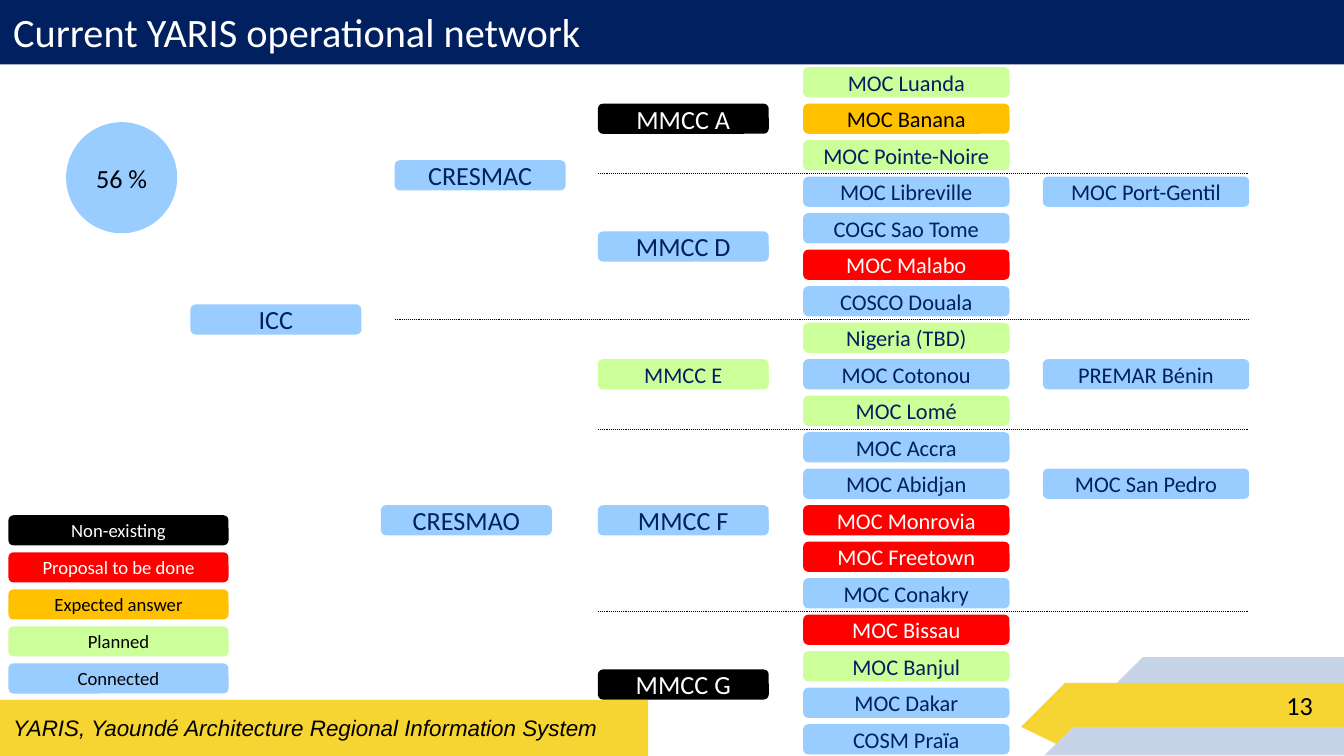
from lxml.etree import SubElement
from pptx import Presentation
from pptx.dml.color import RGBColor
from pptx.enum.dml import MSO_LINE
from pptx.enum.shapes import MSO_CONNECTOR, MSO_SHAPE
from pptx.enum.text import MSO_ANCHOR, MSO_AUTO_SIZE, PP_ALIGN
from pptx.oxml.ns import qn
from pptx.util import Cm, Pt

COLOURS = {
    "navy": "002060", "white": "FFFFFF", "black": "000000", "yellow": "F6D431",
    "mist": "C7D3E6", "missing": "000000", "proposal": "FF0000",
    "expected": "FFC000", "planned": "CCFF99", "connected": "99CCFF",
}
INK = {"missing": "white", "proposal": "white", "expected": "black",
       "planned": "navy", "connected": "navy"}

PILL_HEIGHT = 0.57
FIRST_ROW, ROW_STEP = 1.27, 0.69
FIRST_KEY, KEY_STEP = 9.74, 0.7
CENTRE_LEFT, CENTRE_WIDTH = 15.18, 3.9
PEER_LEFT = 19.71
ZONE_LEFT, HUB_WIDTH = 11.3, 3.23
LINE_END = 23.6

CENTRES = [
    ("MOC Luanda", "planned"), ("MOC Banana", "expected"),
    ("MOC Pointe-Noire", "planned"), ("MOC Libreville", "connected"),
    ("COGC Sao Tome", "connected"), ("MOC Malabo", "proposal"),
    ("COSCO Douala", "connected"), ("Nigeria (TBD)", "planned"),
    ("MOC Cotonou", "connected"), ("MOC Lomé", "planned"),
    ("MOC Accra", "connected"), ("MOC Abidjan", "connected"),
    ("MOC Monrovia", "proposal"), ("MOC Freetown", "proposal"),
    ("MOC Conakry", "connected"), ("MOC Bissau", "proposal"),
    ("MOC Banjul", "planned"), ("MOC Dakar", "connected"),
    ("COSM Praïa", "connected"),
]
PEERS = [("MOC Port-Gentil", 3), ("PREMAR Bénin", 8), ("MOC San Pedro", 11)]
# name, left, row, status, text size
HUBS = [
    ("ICC", 3.6, 6.5, "connected", 14),
    ("CRESMAC", 7.46, 2.55, "connected", 14),
    ("CRESMAO", 7.2, 12, "connected", 14),
    ("MMCC A", ZONE_LEFT, 1, "missing", 14),
    ("MMCC D", ZONE_LEFT, 4.5, "connected", 14),
    ("MMCC E", ZONE_LEFT, 8, "planned", 12),
    ("MMCC F", ZONE_LEFT, 12, "connected", 14),
    ("MMCC G", ZONE_LEFT, 16.5, "missing", 14),
]
KEYS = [
    ("Non-existing", "missing", "white"), ("Proposal to be done", "proposal", "white"),
    ("Expected answer", "expected", "black"), ("Planned", "planned", "black"),
    ("Connected", "connected", "black"),
]
# left end, row below the line
BORDERS = [(ZONE_LEFT, 3), (7.46, 7), (ZONE_LEFT, 10), (ZONE_LEFT, 15)]


def row_top(row):
    return FIRST_ROW + row * ROW_STEP


def colour(name):
    return RGBColor.from_string(COLOURS[name])


def set_values(target, values):
    for name, value in values.items():
        setattr(target, name, value)


class SlideBuilder:
    font = "Calibri"
    frame = {"word_wrap": True, "auto_size": MSO_AUTO_SIZE.NONE,
             "vertical_anchor": MSO_ANCHOR.MIDDLE}
    margins = {f"margin_{side}": Cm(0.25) for side in ("left", "top", "right", "bottom")}

    def __init__(self, page):
        self.page = page

    def label(self, box, text, size, ink, align=PP_ALIGN.CENTER, **font):
        set_values(box.text_frame, self.frame)
        para = box.text_frame.paragraphs[0]
        para.alignment = align
        span = para.add_run()
        span.text = text
        set_values(span.font, {"name": self.font, "size": Pt(size), **font})
        span.font.color.rgb = colour(ink)

    def label_left(self, box, text, size, ink, **font):
        set_values(box.text_frame, self.margins)
        self.label(box, text, size, ink, PP_ALIGN.LEFT, **font)

    def title(self, text):
        box = self.page.shapes.title
        set_values(box, {"left": Cm(0), "top": Cm(-0.03),
                         "width": Cm(25.4), "height": Cm(1.25)})
        box.fill.solid()
        box.fill.fore_color.rgb = colour("navy")
        self.label_left(box, text, 21.6, "white")

    def shape(self, kind, place, fill, flip=False):
        box = self.page.shapes.add_shape(kind, *map(Cm, place))
        box.shadow.inherit = False
        box.fill.solid()
        box.fill.fore_color.rgb = colour(fill)
        box.line.fill.background()
        if flip:
            box.element.spPr.find(qn("a:xfrm")).set("flipH", "1")
        return box

    def pill(self, text, left, top, width, status, size, ink=None):
        box = self.shape(MSO_SHAPE.ROUNDED_RECTANGLE, (left, top, width, PILL_HEIGHT), status)
        self.label(box, text, size, ink or INK[status])

    def border(self, left, top):
        line = self.page.shapes.add_connector(
            MSO_CONNECTOR.STRAIGHT, Cm(left), Cm(top), Cm(LINE_END), Cm(top))
        set_values(line.line, {"width": Pt(0.5), "dash_style": MSO_LINE.ROUND_DOT})
        line.line.color.rgb = colour("black")
        SubElement(line.element.spPr, qn("a:effectLst"))

    def corner(self):
        fold = self.shape(MSO_SHAPE.ISOSCELES_TRIANGLE, (19.3, 13.74, 1.09, 0.36), "yellow")
        fold.rotation = 180
        fold.adjustments[0] = 0.32
        for left, top, side, width, fill in ((19.74, 12.42, 1.86, 3.8, "mist"),
                                             (19.3, 12.91, 0.83, 5.27, "yellow")):
            self.shape(MSO_SHAPE.RECTANGLE, (left + side, top, width, side), fill)
            self.shape(MSO_SHAPE.RIGHT_TRIANGLE, (left, top, side, side), fill, flip=True)

    def footer(self, text, number):
        band = self.shape(MSO_SHAPE.RECTANGLE, (0, 13.23, 12.25, 1.06), "yellow")
        self.label_left(band, text, 12, "black", name="Arial", italic=True)
        box = self.page.shapes.add_textbox(Cm(24.06), Cm(12.89), Cm(1.34), Cm(0.89))
        self.label_left(box, number, 14, "black")


def main():
    deck = Presentation()
    set_values(deck, {"slide_width": Cm(25.4), "slide_height": Cm(14.29)})
    builder = SlideBuilder(deck.slides.add_slide(deck.slide_layouts[5]))

    builder.corner()
    builder.title("Current YARIS operational network")
    builder.footer("YARIS, Yaoundé Architecture Regional Information System", "13")

    for name, left, row, status, size in HUBS:
        builder.pill(name, left, row_top(row), HUB_WIDTH, status, size)
    for row, (name, status) in enumerate(CENTRES):
        builder.pill(name, CENTRE_LEFT, row_top(row), CENTRE_WIDTH, status, 12)
    for name, row in PEERS:
        builder.pill(name, PEER_LEFT, row_top(row), CENTRE_WIDTH, "connected", 12)
    for index, (name, status, ink) in enumerate(KEYS):
        builder.pill(name, 0.16, FIRST_KEY + index * KEY_STEP, 4.16, status, 10, ink)
    for left, row in BORDERS:
        builder.border(left, row_top(row) - 0.06)

    share = builder.shape(MSO_SHAPE.OVAL, (1.25, 2.31, 2.1, 2.1), "connected")
    builder.label(share, "56 %", 14, "black")
    deck.save("out.pptx")


if __name__ == "__main__":
    main()
